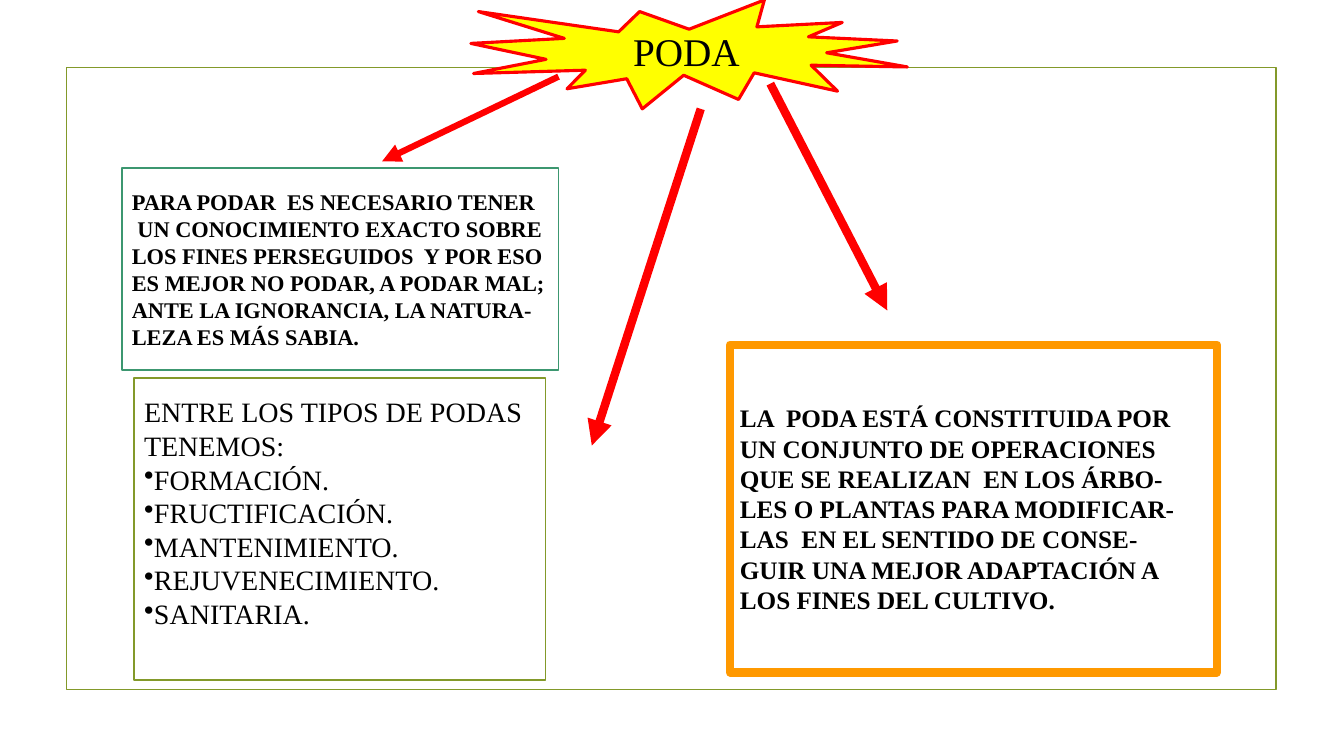
from dataclasses import dataclass

from lxml.etree import SubElement
from pptx import Presentation
from pptx.dml.color import RGBColor
from pptx.enum.shapes import MSO_CONNECTOR, MSO_SHAPE
from pptx.enum.text import MSO_ANCHOR, PP_ALIGN
from pptx.oxml.ns import qn
from pptx.util import Inches, Pt


@dataclass(frozen=True)
class Theme:
    font: str = "Times New Roman"
    black: str = "000000"
    white: str = "FFFFFF"
    yellow: str = "FFFF00"
    red: str = "FF0000"
    olive: str = "83992A"
    green: str = "3C9770"
    orange: str = "FF9900"
    title_size: int = 28
    types_size: int = 20
    definition_size: int = 18
    advice_size: int = 16
    thin: float = 1.25
    medium: float = 2.25
    strong: float = 4.5
    heavy: float = 6


class PruningSlide:
    def __init__(self, deck, theme):
        self.theme = theme
        self.page = deck.slides.add_slide(deck.slide_layouts[6])

    def shape(self, kind, place, line, width, fill=None):
        shape = self.page.shapes.add_shape(kind, *map(Inches, place))
        shape.shadow.inherit = False
        if fill:
            shape.fill.solid()
            shape.fill.fore_color.rgb = RGBColor.from_string(fill)
        else:
            shape.fill.background()
        shape.line.color.rgb = RGBColor.from_string(line)
        shape.line.width = Pt(width)
        return shape

    def text(self, shape, lines, size, bold=False, align=PP_ALIGN.LEFT, bullets_from=None):
        """Set one paragraph a line; lines from index bullets_from on get a bullet."""
        frame = shape.text_frame
        frame.text = "\n".join(lines)
        frame.word_wrap = False
        frame.vertical_anchor = MSO_ANCHOR.MIDDLE
        for index, paragraph in enumerate(frame.paragraphs):
            paragraph.alignment = align
            if bullets_from is not None and index >= bullets_from:
                SubElement(paragraph._p.get_or_add_pPr(), qn("a:buChar"), char="•")
            for span in paragraph.runs:
                span.font.name = self.theme.font
                span.font.size = Pt(size)
                span.font.bold = bold
                span.font.color.rgb = RGBColor.from_string(self.theme.black)

    def arrow(self, start, end, width):
        arrow = self.page.shapes.add_connector(
            MSO_CONNECTOR.STRAIGHT, *map(Inches, (*start, *end)))
        arrow.line.color.rgb = RGBColor.from_string(self.theme.red)
        arrow.line.width = Pt(width)
        SubElement(arrow.line._get_or_add_ln(), qn("a:tailEnd"), type="triangle")
        SubElement(arrow._element.spPr, qn("a:effectLst"))


def main():
    deck = Presentation()
    deck.slide_width, deck.slide_height = Inches(13.33), Inches(7.5)
    theme = Theme()
    slide = PruningSlide(deck, theme)
    rectangle = MSO_SHAPE.RECTANGLE

    slide.shape(rectangle, (0.66, 0.67, 12, 6.17), theme.olive, theme.thin)

    title = slide.shape(MSO_SHAPE.EXPLOSION1, (4.67, 0, 4.33, 1.08),
                        theme.red, theme.medium, theme.yellow)
    slide.text(title, ["PODA"], theme.title_size, align=PP_ALIGN.CENTER)

    advice = slide.shape(rectangle, (1.21, 1.67, 4.33, 2), theme.green, theme.thin, theme.white)
    slide.text(advice, [
        "PARA PODAR  ES NECESARIO TENER",
        " UN CONOCIMIENTO EXACTO SOBRE",
        "LOS FINES PERSEGUIDOS  Y POR ESO",
        "ES MEJOR NO PODAR, A PODAR MAL;",
        "ANTE LA IGNORANCIA, LA NATURA-",
        "LEZA ES MÁS SABIA.",
    ], theme.advice_size, bold=True)

    definition = slide.shape(rectangle, (7.24, 3.42, 4.83, 3.25),
                             theme.orange, theme.heavy, theme.white)
    slide.text(definition, [
        "LA  PODA ESTÁ CONSTITUIDA POR",
        "UN CONJUNTO DE OPERACIONES",
        "QUE SE REALIZAN  EN LOS ÁRBO-",
        "LES O PLANTAS PARA MODIFICAR-",
        "LAS  EN EL SENTIDO DE CONSE-",
        "GUIR UNA MEJOR ADAPTACIÓN A",
        "LOS FINES DEL CULTIVO.",
    ], theme.definition_size, bold=True)

    types = slide.shape(rectangle, (1.33, 3.75, 4.08, 3), theme.olive, theme.thin, theme.white)
    types.text_frame.margin_bottom = Inches(0.38)
    slide.text(types, [
        "ENTRE LOS TIPOS DE PODAS",
        "TENEMOS:",
        "FORMACIÓN.",
        "FRUCTIFICACIÓN.",
        "MANTENIMIENTO.",
        "REJUVENECIMIENTO.",
        "SANITARIA.",
    ], theme.types_size, bullets_from=2)

    slide.arrow((5.54, 0.76), (3.79, 1.6), theme.strong)
    slide.arrow((7.64, 0.83), (8.8, 3.08), theme.heavy)
    slide.arrow((6.95, 1.08), (5.87, 4.42), theme.heavy)

    deck.save("out.pptx")


if __name__ == "__main__":
    main()
